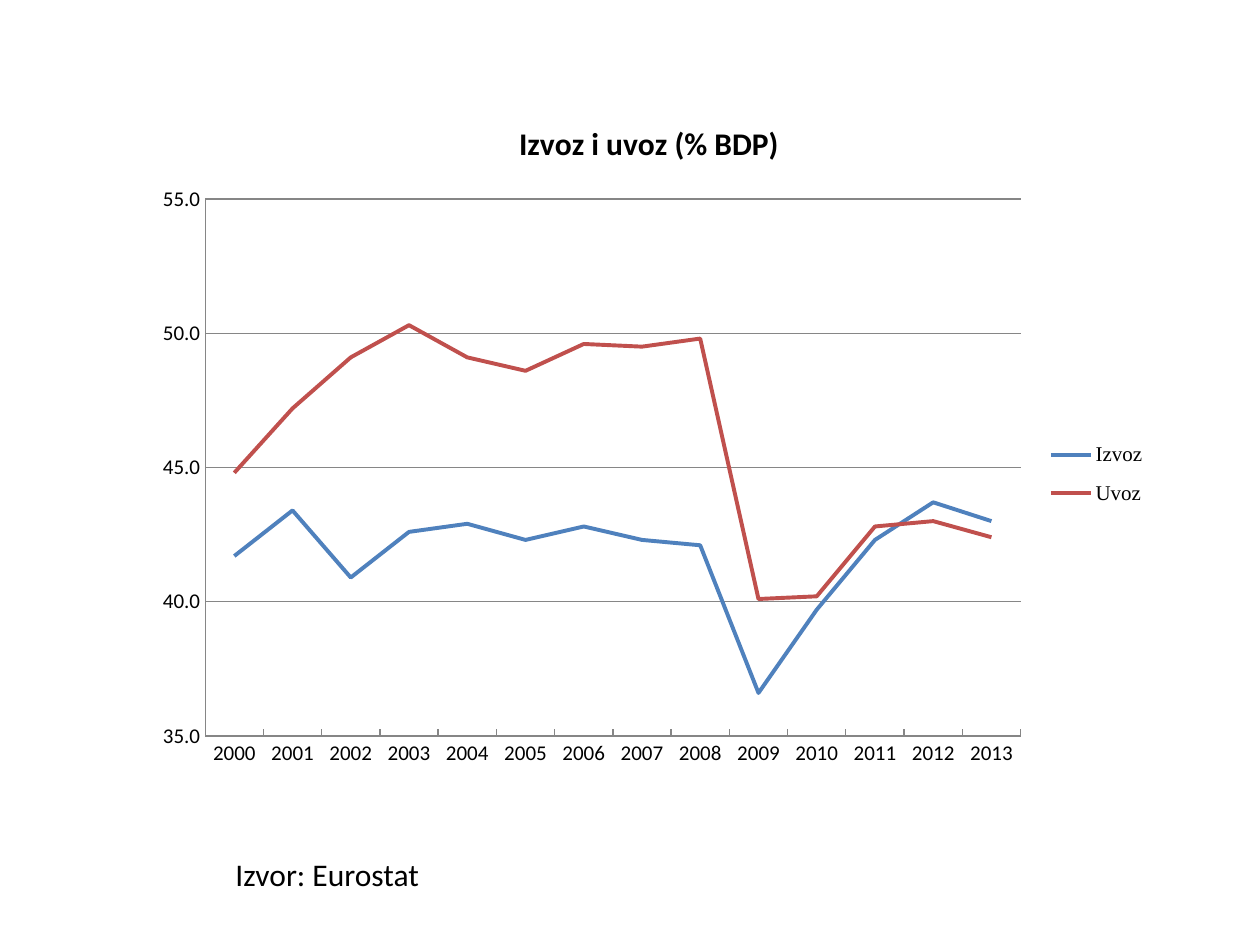
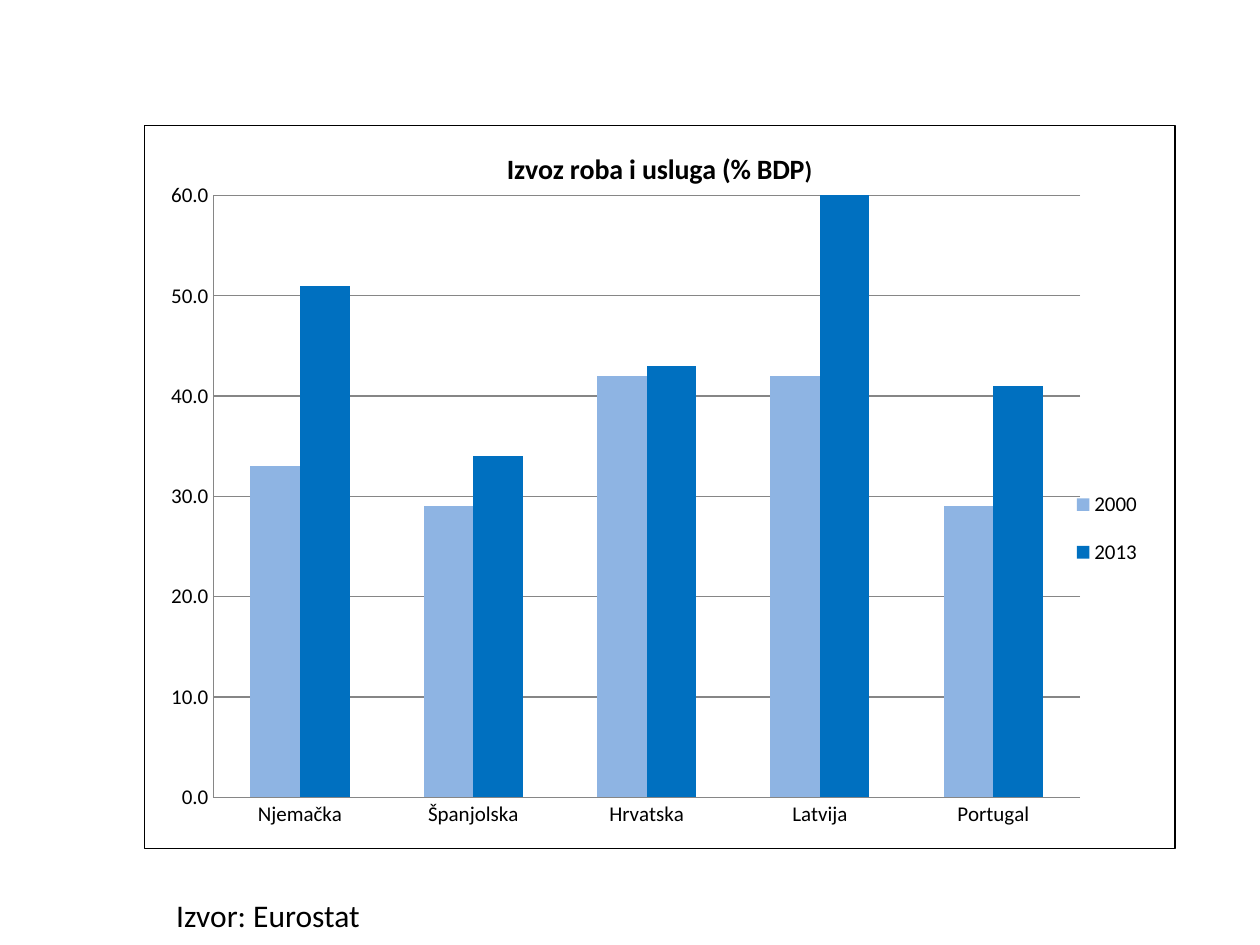
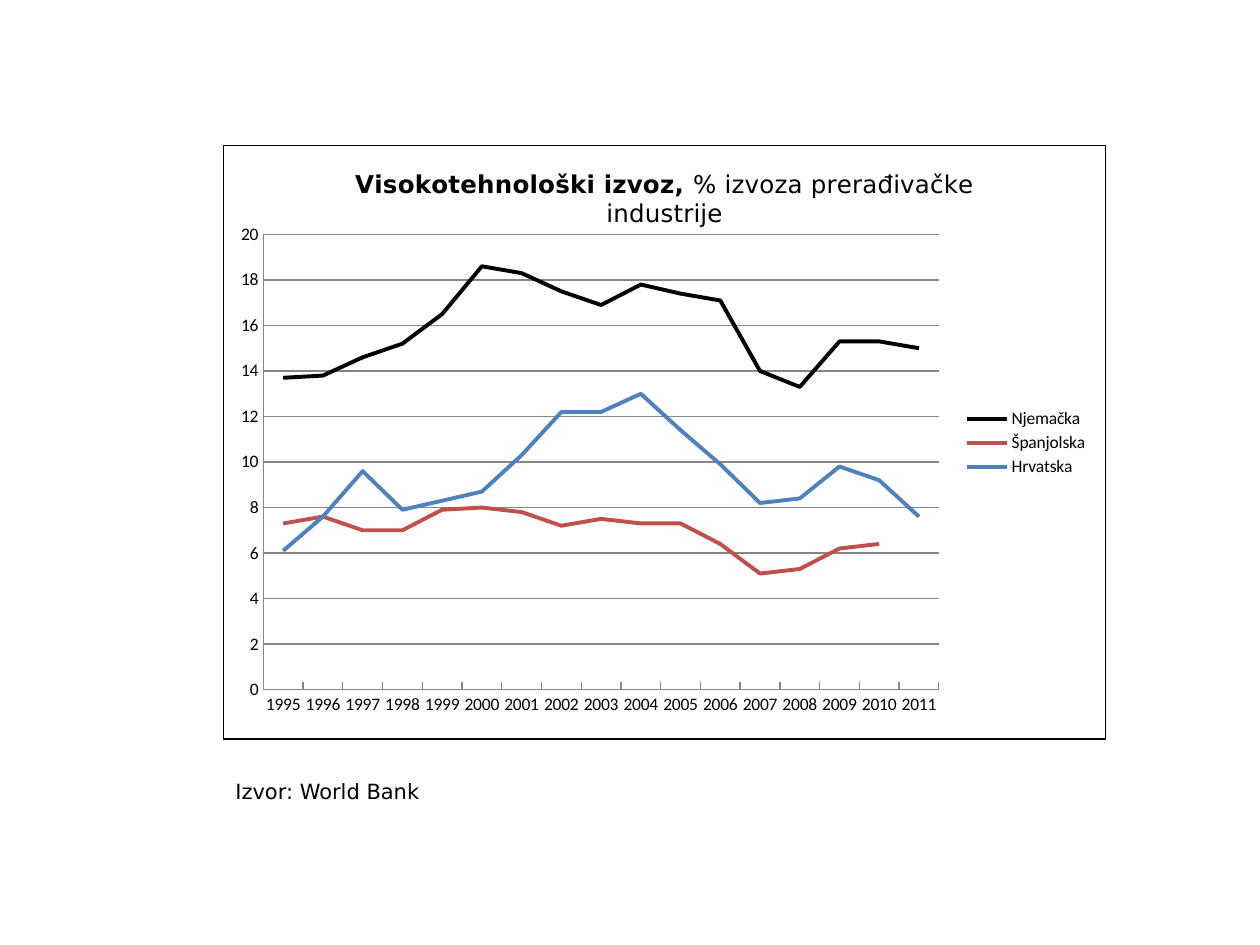
from dataclasses import dataclass

from pptx import Presentation
from pptx.chart.axis import CategoryAxis, ValueAxis
from pptx.chart.chart import Chart
from pptx.chart.data import CategoryChartData
from pptx.dml.color import RGBColor
from pptx.enum.chart import XL_CHART_TYPE as ChartType
from pptx.enum.chart import XL_LEGEND_POSITION as LegendPosition
from pptx.enum.chart import XL_TICK_MARK as TickMark
from pptx.oxml import parse_xml
from pptx.oxml.ns import nsdecls, qn
from pptx.slide import Slide
from pptx.util import Inches, Pt


@dataclass(frozen=True)
class Theme:
    black: str = "000000"
    grid: str = "868686"
    blue: str = "4F81BD"
    red: str = "C0504D"
    pale_blue: str = "8EB4E3"
    deep_blue: str = "0070C0"
    sans: str = "Calibri"
    wide: str = "DejaVu Sans"
    serif: str = "Times New Roman"
    tiny: float = 10
    small: float = 12
    medium: float = 14
    large: float = 16
    huge: float = 18
    thin: float = 0.75
    thick: float = 2.25


THEME = Theme()


@dataclass(frozen=True)
class Frame:
    """Left, top, width and height: inches on a slide, percent in a chart."""
    left: float
    top: float
    width: float
    height: float

    def lengths(self) -> list[int]:
        return [Inches(side) for side in (self.left, self.top, self.width, self.height)]


@dataclass(frozen=True)
class TitlePart:
    text: str
    size: float
    bold: bool = True
    font: str = THEME.sans


@dataclass(frozen=True)
class Series:
    name: str
    values: tuple[float | None, ...]
    color: str


@dataclass(frozen=True)
class Scale:
    low: float
    high: float
    step: float
    number_format: str = "#,##0.0"


@dataclass(frozen=True)
class SourceNote:
    text: str
    frame: Frame
    size: float = THEME.huge
    font: str = THEME.sans
    wrap: bool = False


@dataclass(frozen=True)
class ChartSlide:
    kind: ChartType
    frame: Frame
    plot: Frame
    legend: Frame
    title: tuple[TitlePart, ...]
    categories: tuple[str, ...]
    series: tuple[Series, ...]
    scale: Scale
    note: SourceNote
    text_size: float = THEME.small
    legend_font: str = THEME.sans
    bordered: bool = True


def years(first: int, last: int) -> tuple[str, ...]:
    return tuple(str(year) for year in range(first, last + 1))


CHART_SLIDES = (
    ChartSlide(
        kind=ChartType.LINE,
        frame=Frame(1.13, 0.76, 8.04, 5.43),
        plot=Frame(6.2, 15.1, 80.5, 78.5),
        legend=Frame(89.2, 48.5, 10, 13.6),
        title=(TitlePart("Izvoz i uvoz (% BDP)", THEME.huge),),
        categories=years(2000, 2013),
        series=(
            Series("Izvoz", (41.7, 43.4, 40.9, 42.6, 42.9, 42.3, 42.8,
                             42.3, 42.1, 36.6, 39.7, 42.3, 43.7, 43), THEME.blue),
            Series("Uvoz", (44.8, 47.2, 49.1, 50.3, 49.1, 48.6, 49.6,
                            49.5, 49.8, 40.1, 40.2, 42.8, 43, 42.4), THEME.red),
        ),
        scale=Scale(35, 55, 5),
        note=SourceNote("Izvor: Eurostat", Frame(1.77, 6.74, 1.67, 0.4)),
        legend_font=THEME.serif,
        bordered=False,
    ),
    ChartSlide(
        kind=ChartType.COLUMN_CLUSTERED,
        frame=Frame(1.14, 0.99, 8.19, 5.75),
        plot=Frame(6.7, 9.7, 84.1, 83.2),
        legend=Frame(89.4, 47.6, 8, 16.3),
        title=(TitlePart("Izvoz roba i usluga (% BDP", THEME.large),
               TitlePart(")", THEME.medium)),
        categories=("Njemačka", "Španjolska", "Hrvatska", "Latvija", "Portugal"),
        series=(
            Series("2000", (33, 29, 42, 42, 29), THEME.pale_blue),
            Series("2013", (51, 34, 43, 60, 41), THEME.deep_blue),
        ),
        scale=Scale(0, 60, 10),
        note=SourceNote("Izvor: Eurostat", Frame(1.3, 7.06, 2.46, 0.4), wrap=True),
    ),
    ChartSlide(
        kind=ChartType.LINE,
        frame=Frame(1.77, 1.15, 7.01, 4.72),
        plot=Frame(4.5, 15, 76.6, 76.7),
        legend=Frame(83.5, 43.6, 15, 13),
        title=(TitlePart("Visokotehnološki izvoz, ", THEME.medium, font=THEME.wide),
               TitlePart("% izvoza prerađivačke industrije", THEME.medium, False, THEME.wide)),
        categories=years(1995, 2011),
        series=(
            Series("Njemačka", (13.7, 13.8, 14.6, 15.2, 16.5, 18.6, 18.3, 17.5, 16.9,
                                17.8, 17.4, 17.1, 14, 13.3, 15.3, 15.3, 15), THEME.black),
            Series("Španjolska", (7.3, 7.6, 7, 7, 7.9, 8, 7.8, 7.2, 7.5,
                                  7.3, 7.3, 6.4, 5.1, 5.3, 6.2, 6.4, None), THEME.red),
            Series("Hrvatska", (6.1, 7.6, 9.6, 7.9, 8.3, 8.7, 10.3, 12.2, 12.2,
                                13, 11.4, 9.9, 8.2, 8.4, 9.8, 9.2, 7.6), THEME.blue),
        ),
        scale=Scale(0, 20, 2, "General"),
        note=SourceNote("Izvor: World Bank", Frame(1.77, 6.13, 1.73, 0.3),
                        THEME.small, THEME.wide),
        text_size=THEME.tiny,
    ),
)


def style_font(font, name: str, size: float, bold: bool = False) -> None:
    font.name = name
    font.size = Pt(size)
    font.bold = bold
    font.color.rgb = RGBColor.from_string(THEME.black)


def style_line(line, color: str, width: float) -> None:
    line.color.rgb = RGBColor.from_string(color)
    line.width = Pt(width)


def place_part(part, frame: Frame, position: int, inner: bool = False) -> None:
    """Give a plot area or a legend a fixed place within its chart."""
    for layout in part.findall(qn("c:layout")):
        part.remove(layout)
    target = '<c:layoutTarget val="inner"/>' if inner else ""
    part.insert(position, parse_xml(
        f'<c:layout {nsdecls("c")}><c:manualLayout>{target}'
        '<c:xMode val="edge"/><c:yMode val="edge"/>'
        f'<c:x val="{frame.left / 100:.3f}"/><c:y val="{frame.top / 100:.3f}"/>'
        f'<c:w val="{frame.width / 100:.3f}"/><c:h val="{frame.height / 100:.3f}"/>'
        '</c:manualLayout></c:layout>'))


def set_border(chart: Chart, bordered: bool) -> None:
    space = chart.element
    if space.find(qn("c:roundedCorners")) is None:
        space.find(qn("c:date1904")).addnext(
            parse_xml(f'<c:roundedCorners {nsdecls("c")} val="0"/>'))
    paint = (f'<a:solidFill><a:srgbClr val="{THEME.black}"/></a:solidFill>'
             if bordered else "<a:noFill/>")
    space.find(qn("c:chart")).addnext(parse_xml(
        f'<c:spPr {nsdecls("c", "a")}><a:noFill/>'
        f'<a:ln w="{Pt(THEME.thin)}">{paint}</a:ln></c:spPr>'))


def style_axis(axis: CategoryAxis | ValueAxis, tick: TickMark, size: float) -> None:
    axis.major_tick_mark = tick
    axis.minor_tick_mark = TickMark.NONE
    style_line(axis.format.line, THEME.grid, THEME.thin)
    style_font(axis.tick_labels.font, THEME.sans, size)


def style_axes(chart: Chart, design: ChartSlide) -> None:
    is_line = design.kind == ChartType.LINE
    style_axis(chart.category_axis, TickMark.INSIDE if is_line else TickMark.NONE,
               design.text_size)
    chart.category_axis.has_major_gridlines = False
    axis, scale = chart.value_axis, design.scale
    style_axis(axis, TickMark.NONE, design.text_size)
    axis.minimum_scale = scale.low
    axis.maximum_scale = scale.high
    axis.major_unit = scale.step
    axis.tick_labels.number_format = scale.number_format
    axis.tick_labels.number_format_is_linked = False
    axis.has_major_gridlines = True
    style_line(axis.major_gridlines.format.line, THEME.grid, THEME.thin)


def style_series(chart: Chart, design: ChartSlide) -> None:
    plot = chart.plots[0]
    plot.vary_by_categories = False
    is_line = design.kind == ChartType.LINE
    if not is_line:
        plot.gap_width = 150
    for drawn, series in zip(plot.series, design.series):
        if is_line:
            drawn.smooth = False
            style_line(drawn.format.line, series.color, THEME.thick)
        else:
            drawn.format.fill.solid()
            drawn.format.fill.fore_color.rgb = RGBColor.from_string(series.color)


def add_title(chart: Chart, parts: tuple[TitlePart, ...]) -> None:
    chart.has_title = True
    para = chart.chart_title.text_frame.paragraphs[0]
    for part in parts:
        span = para.add_run()
        span.text = part.text
        style_font(span.font, part.font, part.size, part.bold)


def add_legend(chart: Chart, design: ChartSlide) -> None:
    chart.has_legend = True
    chart.legend.position = LegendPosition.RIGHT
    chart.legend.include_in_layout = False
    style_font(chart.legend.font, design.legend_font, design.text_size)
    place_part(chart.element.find(".//" + qn("c:legend")), design.legend, 1)


def add_chart(page: Slide, design: ChartSlide) -> None:
    data = CategoryChartData()
    data.categories = design.categories
    for series in design.series:
        data.add_series(series.name, series.values)
    chart = page.shapes.add_chart(design.kind, *design.frame.lengths(), data).chart
    style_font(chart.font, THEME.sans, design.text_size)
    set_border(chart, design.bordered)
    add_title(chart, design.title)
    add_legend(chart, design)
    style_axes(chart, design)
    style_series(chart, design)
    place_part(chart.element.find(".//" + qn("c:plotArea")), design.plot, 0, inner=True)


def add_note(page: Slide, note: SourceNote) -> None:
    box = page.shapes.add_textbox(*note.frame.lengths())
    box.text_frame.word_wrap = note.wrap
    para = box.text_frame.paragraphs[0]
    para.text = note.text
    style_font(para.font, note.font, note.size)


def main() -> None:
    deck = Presentation()
    deck.slide_width, deck.slide_height = Inches(10), Inches(7.5)
    blank = deck.slide_layouts[6]
    for design in CHART_SLIDES:
        page = deck.slides.add_slide(blank)
        add_chart(page, design)
        add_note(page, design.note)
    deck.save("out.pptx")


if __name__ == "__main__":
    main()
